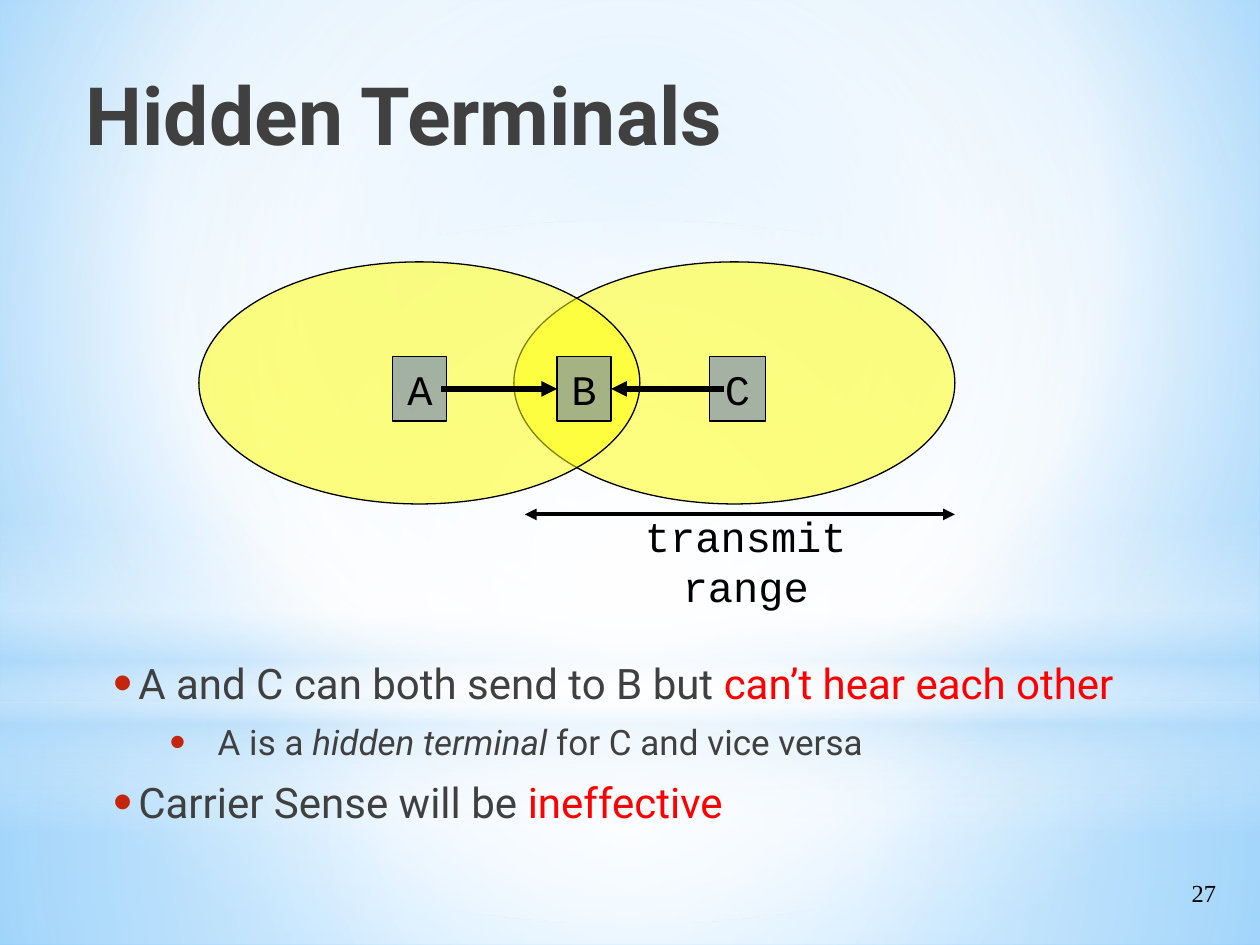
from lxml.etree import SubElement
from pptx import Presentation
from pptx.dml.color import RGBColor
from pptx.enum.shapes import MSO_CONNECTOR, MSO_SHAPE
from pptx.enum.text import MSO_ANCHOR, MSO_AUTO_SIZE, PP_ALIGN
from pptx.oxml.ns import qn
from pptx.util import Cm, Pt

COLORS = {
    "black": "000000", "white": "FFFFFF", "text": "404040", "red": "FF0000",
    "bullet": "C3260C", "yellow": "FFFF00", "station": "4E67C8",
    "haze": "B4DCFA", "sky": "9ED5FF", "deep_sky": "5BB9FF",
}
SANS, MONO, SERIF = "Roboto", "Courier New", "Times New Roman"
CENTERED = (50, 50, 50, 50)


def add_xml(parent, tag, **attributes):
    child = SubElement(parent, qn(tag))
    for name, value in attributes.items():
        child.set(name, str(value))
    return child


def set_alpha(color_element, percent):
    add_xml(color_element, "a:alpha", val=percent * 1000)


def make_gradient(parent, stops, focus=None):
    """Swap the solid fill in parent for (position, color, alpha) stops.

    The gradient is circular around focus (left, top, right, bottom insets
    in percent), or runs downwards when there is no focus.
    """
    solid = parent.find(qn("a:solidFill"))
    gradient = add_xml(parent, "a:gradFill", rotWithShape=1)
    parent.replace(solid, gradient)
    stop_list = add_xml(gradient, "a:gsLst")
    for position, color, alpha in stops:
        stop = add_xml(stop_list, "a:gs", pos=position * 1000)
        set_alpha(add_xml(stop, "a:srgbClr", val=COLORS[color]), alpha)
    if focus is None:
        add_xml(gradient, "a:lin", ang=90 * 60000, scaled=0)
    else:
        path = add_xml(gradient, "a:path", path="circle")
        insets = {side: value * 1000 for side, value in zip("ltrb", focus)}
        add_xml(path, "a:fillToRect", **insets)


class SlideBuilder:
    def __init__(self, slide):
        self.slide = slide

    def background(self, stops, focus):
        self.slide.background.fill.solid()
        properties = self.slide.element.find(".//" + qn("p:bgPr"))
        make_gradient(properties, stops, focus)

    def shape(self, kind, box, color, alpha=100):
        shape = self.slide.shapes.add_shape(kind, *map(Cm, box))
        shape.shadow.inherit = False
        shape.fill.solid()
        shape.fill.fore_color.rgb = RGBColor.from_string(COLORS[color])
        if alpha < 100:
            set_alpha(shape.element.spPr.find(".//" + qn("a:srgbClr")), alpha)
        shape.line.color.rgb = RGBColor.from_string(COLORS["black"])
        shape.line.width = Pt(0.75)
        return shape

    def glow(self, kind, box, stops, focus=None):
        shape = self.shape(kind, box, "white")
        shape.line.fill.background()
        make_gradient(shape.element.spPr, stops, focus)

    def station(self, left, width, name):
        shape = self.shape(MSO_SHAPE.RECTANGLE, (left, 7.19, width, 1.3), "station", 50)
        frame = shape.text_frame
        frame.word_wrap = False
        frame.vertical_anchor = MSO_ANCHOR.MIDDLE
        self.paragraph(frame.paragraphs[0], [(name, "black")], 24, MONO,
                       PP_ALIGN.CENTER, before=4.8)
        return shape

    def text_frame(self, box):
        frame = self.slide.shapes.add_textbox(*map(Cm, box)).text_frame
        frame.word_wrap = True
        frame.auto_size = MSO_AUTO_SIZE.NONE
        return frame

    def paragraph(self, paragraph, runs, size, font, align=PP_ALIGN.LEFT, before=0, after=0):
        """Fill paragraph with runs of (text, color, optional style word)."""
        paragraph.alignment = align
        paragraph.space_before, paragraph.space_after = Pt(before), Pt(after)
        for text, color, *style in runs:
            run = paragraph.add_run()
            run.text = text
            run.font.name, run.font.size = font, Pt(size)
            run.font.bold = "bold" in style
            run.font.italic = "italic" in style
            run.font.color.rgb = RGBColor.from_string(COLORS[color])

    def text(self, box, runs, size, font, align=PP_ALIGN.LEFT, before=0):
        frame = self.text_frame(box)
        self.paragraph(frame.paragraphs[0], runs, size, font, align, before)

    def bullets(self, box, items):
        """Add (level, size, runs) items as a bulleted list."""
        margins = [(0.64, 0.51), (2.24, 0.97)]
        frame = self.text_frame(box)
        frame.margin_top = 0
        for index, (level, size, runs) in enumerate(items):
            paragraph = frame.add_paragraph() if index else frame.paragraphs[0]
            paragraph.level = level
            self.paragraph(paragraph, runs, size, SANS, before=size * 0.2, after=3)
            margin, hanging = margins[level]
            properties = paragraph._p.get_or_add_pPr()
            properties.set("marL", str(Cm(margin)))
            properties.set("indent", str(-Cm(hanging)))
            color = add_xml(properties, "a:buClr")
            add_xml(color, "a:srgbClr", val=COLORS["bullet"])
            add_xml(properties, "a:buSzPct", val=130000)
            add_xml(properties, "a:buFont", typeface="Arial")
            add_xml(properties, "a:buChar", char="•")

    def arrow(self, start, end, width, heads=("tailEnd",)):
        connector = self.slide.shapes.add_connector(
            MSO_CONNECTOR.STRAIGHT, *map(Cm, (*start, *end)))
        connector.line.color.rgb = RGBColor.from_string(COLORS["black"])
        connector.line.width = Pt(width)
        line = connector.line._get_or_add_ln()
        for head in heads:
            add_xml(line, "a:" + head, type="triangle")
        add_xml(connector.element.spPr, "a:effectLst")
        return connector


def main():
    presentation = Presentation()
    presentation.slide_width, presentation.slide_height = Cm(25.4), Cm(19.05)
    slide = presentation.slides.add_slide(presentation.slide_layouts[6])
    builder = SlideBuilder(slide)

    builder.background([(0, "sky", 100), (60, "white", 100), (100, "deep_sky", 100)],
                       (20, 10, 20, 60))
    builder.glow(MSO_SHAPE.RECTANGLE, (0, 14.17, 25.4, 4.88),
                 [(0, "white", 91), (37, "white", 76), (100, "haze", 79)], CENTERED)
    builder.glow(MSO_SHAPE.RECTANGLE, (0, 0, 25.4, 14.17),
                 [(0, "white", 89), (48, "white", 62), (100, "haze", 79)], CENTERED)
    builder.glow(MSO_SHAPE.RECTANGLE, (0, 10.46, 25.4, 6.35),
                 [(0, "white", 0), (29, "white", 30), (45, "haze", 40),
                  (55, "white", 26), (65, "haze", 60), (100, "white", 0)])
    builder.glow(MSO_SHAPE.OVAL, (0, 4.45, 25.4, 14.17),
                 [(0, "white", 100), (56, "white", 0)], CENTERED)

    builder.text((22.23, 17.58, 2.54, 1.07), [("27", "black")], 14, SERIF, PP_ALIGN.RIGHT)
    builder.bullets((1.9, 13.26, 23.5, 4), [
        (0, 24, [("A and C can both send to B but ", "text"),
                 ("can’t hear each other", "red")]),
        (1, 20, [("A is a ", "text"), ("hidden terminal", "text", "italic"),
                 (" for C and vice versa", "text")]),
        (0, 24, [("Carrier Sense will be ", "text"), ("ineffective", "red")]),
    ])
    builder.text((1.48, 1.19, 20.93, 1.9), [("Hidden Terminals", "text", "bold")], 46, SANS)

    for range_left in (10.36, 4.01):
        builder.shape(MSO_SHAPE.OVAL, (range_left, 5.28, 8.89, 4.88), "yellow", 50)
    builder.station(7.92, 1.09, "A")
    receiver = builder.station(11.23, 1.09, "B")
    builder.station(14.3, 1.14, "C")

    middle = 7.84
    builder.arrow((8.89, middle), (11.23, middle), 3).end_connect(receiver, 1)
    builder.arrow((14.6, middle), (12.32, middle), 3).end_connect(receiver, 3)
    builder.arrow((10.58, 10.37), (19.25, 10.37), 2.25, ("headEnd", "tailEnd"))
    builder.text((12.07, 10.16, 5.93, 2.4), [("transmit range", "black")], 24, MONO,
                 PP_ALIGN.CENTER, before=4.8)

    presentation.save("out.pptx")


if __name__ == "__main__":
    main()
